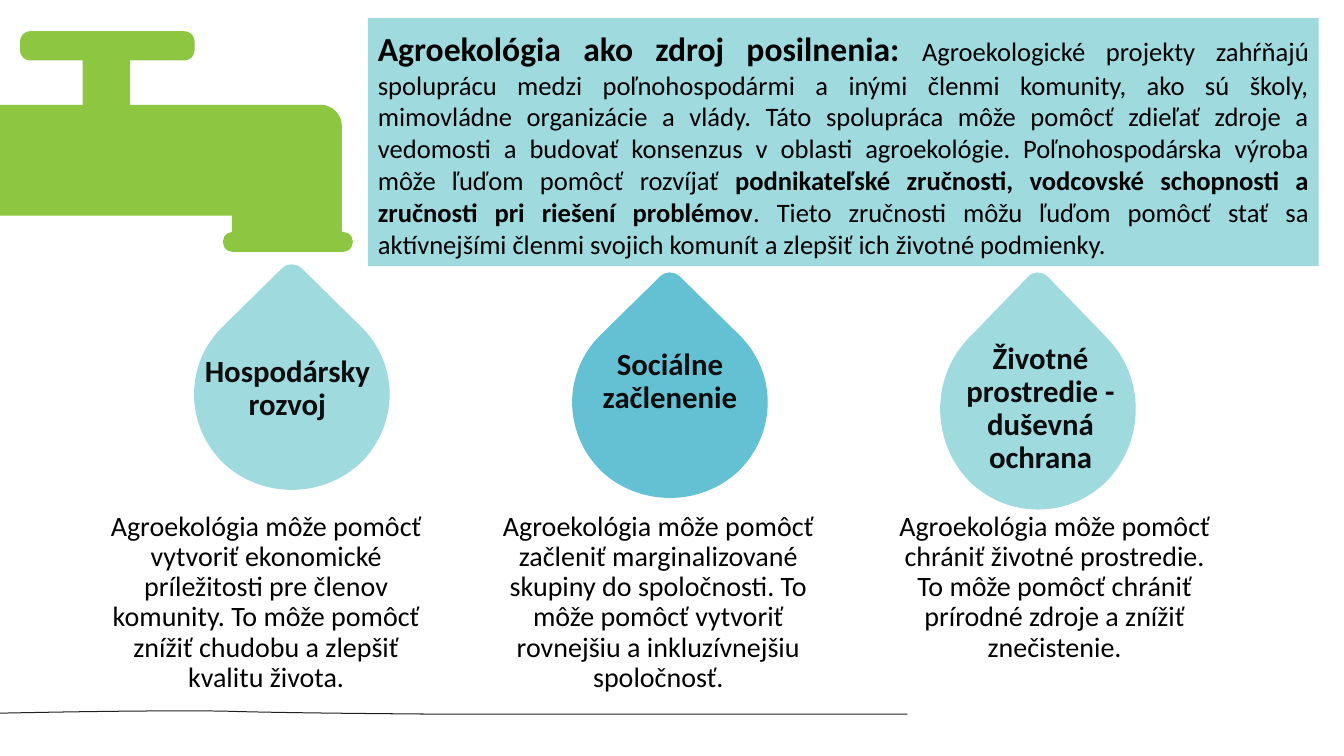
from pptx import Presentation
from pptx.dml.color import RGBColor
from pptx.enum.shapes import MSO_SHAPE
from pptx.enum.text import MSO_ANCHOR, PP_ALIGN
from pptx.oxml.ns import qn
from pptx.util import Inches, Pt

RECTANGLE = MSO_SHAPE.RECTANGLE
ROUNDED = MSO_SHAPE.ROUNDED_RECTANGLE
TOP = MSO_ANCHOR.TOP
CENTER = PP_ALIGN.CENTER
JUSTIFY = PP_ALIGN.JUSTIFY

GREEN = RGBColor(0x8D, 0xC6, 0x41)
PALE_TEAL = RGBColor(0x9F, 0xDA, 0xDF)
TEAL = RGBColor(0x63, 0xC1, 0xD3)
BLACK = RGBColor(0x00, 0x00, 0x00)
INTRO_INK = RGBColor(0x01, 0x01, 0x01)
LABEL_INK = RGBColor(0x0D, 0x0D, 0x0D)
RULE_INK = RGBColor(0x23, 0x1F, 0x20)

FONT = "Calibri"
DROP_HEIGHT = 2.34

INTRO_RUNS = [
    ("Agroekológia ako zdroj posilnenia: ", 24, True),
    ("Agroekologické projekty zahŕňajú spoluprácu medzi poľnohospodármi a inými "
     "členmi komunity, ako sú školy, mimovládne organizácie a vlády. Táto spolupráca "
     "môže pomôcť zdieľať zdroje a vedomosti a budovať konsenzus v oblasti "
     "agroekológie. Poľnohospodárska výroba môže ľuďom pomôcť rozvíjať ", 19, False),
    ("podnikateľské zručnosti, vodcovské schopnosti a zručnosti pri riešení problémov",
     19, True),
    (". Tieto zručnosti môžu ľuďom pomôcť stať sa aktívnejšími členmi svojich komunít "
     "a zlepšiť ich životné podmienky.", 19, False),
]

COLUMNS = [
    {
        "drop": (1.83, 2.61, 2.13, 2.34), "color": PALE_TEAL,
        "label": (1.59, 3.48, 2.52, 0.55), "title": ["Hospodársky rozvoj"],
        "body": (0.89, 5.03, 3.5, 1.5),
        "text": "Agroekológia môže pomôcť vytvoriť ekonomické príležitosti pre členov "
                "komunity. To môže pomôcť znížiť chudobu a zlepšiť kvalitu života.",
    },
    {
        "drop": (5.58, 2.69, 2.13, 2.34), "color": TEAL,
        "label": (5.58, 3.41, 2.13, 0.37), "title": ["Sociálne začlenenie"],
        "body": (4.85, 5.03, 3.36, 1.5),
        "text": "Agroekológia môže pomôcť začleniť marginalizované skupiny do "
                "spoločnosti. To môže pomôcť vytvoriť rovnejšiu a inkluzívnejšiu "
                "spoločnosť.",
    },
    {
        "drop": (9.23, 2.69, 2.13, 2.46), "color": PALE_TEAL,
        "label": (9.45, 3.35, 1.74, 0.37),
        "title": ["Životné prostredie -", "duševná ochrana"],
        "body": (8.75, 5.03, 3.42, 1.5),
        "text": "Agroekológia môže pomôcť chrániť životné prostredie. To môže pomôcť "
                "chrániť prírodné zdroje a znížiť znečistenie.",
    },
]


def paint(shape, color):
    shape.shadow.inherit = False
    shape.fill.solid()
    shape.fill.fore_color.rgb = color
    shape.line.fill.background()


def add_outline(shapes, left, top, start, segments, color, stretch=1):
    def place(point):
        return Inches(left + point[0]), Inches(top + point[1] * stretch)

    builder = shapes.build_freeform(*place(start))
    builder.add_line_segments(
        [place(point) for segment in segments for point in segment], close=True)
    shape = builder.convert_to_shape()
    paint(shape, color)
    outline = next(shape._element.iter(qn("a:path")))
    steps = iter(outline.findall(qn("a:lnTo")))
    for segment in segments:
        step = next(steps)
        if len(segment) == 3:
            step.tag = qn("a:cubicBezTo")
            for follower in (next(steps), next(steps)):
                step.append(follower[0])
                outline.remove(follower)


def add_preset(shapes, kind, box, color):
    shape = shapes.add_shape(kind, *map(Inches, box))
    paint(shape, color)
    return shape


def add_run(paragraph, text, size, color, bold):
    run = paragraph.add_run()
    run.text = text
    run.font.name = FONT
    run.font.size = Pt(size)
    run.font.bold = bold
    run.font.color.rgb = color


def add_centred_text(slide, box, lines, size, color, bold):
    frame = slide.shapes.add_textbox(*map(Inches, box)).text_frame
    frame.word_wrap = True
    for index, line in enumerate(lines):
        paragraph = frame.add_paragraph() if index else frame.paragraphs[0]
        paragraph.alignment = CENTER
        paragraph.line_spacing = 0.9
        add_run(paragraph, line, size, color, bold)


def add_ground_line(slide, left, top):
    add_outline(slide.shapes, left, top, (9, 0.04), [
        ((4.43, 0.04),),
        ((4.41, 0.04), (2.81, 0.03), (2.23, 0.01)),
        ((1.55, 0), (0.5, 0.02), (0, 0.03)),
        ((0, 0.02),),
        ((0.5, 0.01), (1.55, -0.01), (2.23, 0)),
        ((2.81, 0.02), (4.41, 0.03), (4.43, 0.03)),
        ((9, 0.03),),
    ], RULE_INK)


def add_tap(slide, left, top):
    shapes = slide.shapes.add_group_shape().shapes
    add_outline(shapes, left, top + 0.73, (0, 0), [
        ((0, 1.1),), ((2.3, 1.1),), ((2.3, 1.26),), ((3.39, 1.26),),
        ((3.39, 0.21),),
        ((3.39, 0.1), (3.3, 0), (3.18, 0)),
    ], GREEN)
    lip = add_preset(shapes, ROUNDED, (left + 2.21, top + 1.99, 1.29, 0.2), GREEN)
    lip.adjustments[0] = 0.5
    add_preset(shapes, RECTANGLE, (left + 0.82, top + 0.28, 0.47, 0.47), GREEN)
    handle = add_preset(shapes, ROUNDED, (left + 0.2, top, 1.73, 0.29), GREEN)
    handle.adjustments[0] = 0.35


def add_drop(slide, box, color):
    left, top, _, height = box
    add_outline(slide.shapes, left, top, (1.16, 0.05), [
        ((1.1, 0), (1.02, 0), (0.97, 0.05)),
        ((0.38, 0.63),),
        ((0, 1), (0, 1.6), (0.38, 1.98)),
        ((0.76, 2.34), (1.37, 2.34), (1.75, 1.98)),
        ((2.13, 1.6), (2.13, 1), (1.75, 0.63)),
    ], color, height / DROP_HEIGHT)


def add_column(slide, column):
    add_drop(slide, column["drop"], column["color"])
    add_centred_text(slide, column["label"], column["title"], 22, LABEL_INK, True)
    add_centred_text(slide, column["body"], [column["text"]], 20, BLACK, False)


def add_intro(slide, box):
    frame = add_preset(slide.shapes, RECTANGLE, box, PALE_TEAL).text_frame
    frame.word_wrap = True
    frame.vertical_anchor = TOP
    frame.margin_top = frame.margin_bottom = Inches(0.1)
    paragraph = frame.paragraphs[0]
    paragraph.alignment = JUSTIFY
    for text, size, bold in INTRO_RUNS:
        add_run(paragraph, text, size, INTRO_INK, bold)


def main():
    presentation = Presentation()
    presentation.slide_width = Inches(13.33)
    presentation.slide_height = Inches(7.5)
    slide = presentation.slides.add_slide(presentation.slide_layouts[6])
    add_ground_line(slide, 0, 7.05)
    add_tap(slide, 0, 0.31)
    for column in COLUMNS:
        add_column(slide, column)
    add_intro(slide, (3.65, 0.18, 9.43, 2.46))
    presentation.save("out.pptx")


if __name__ == "__main__":
    main()
